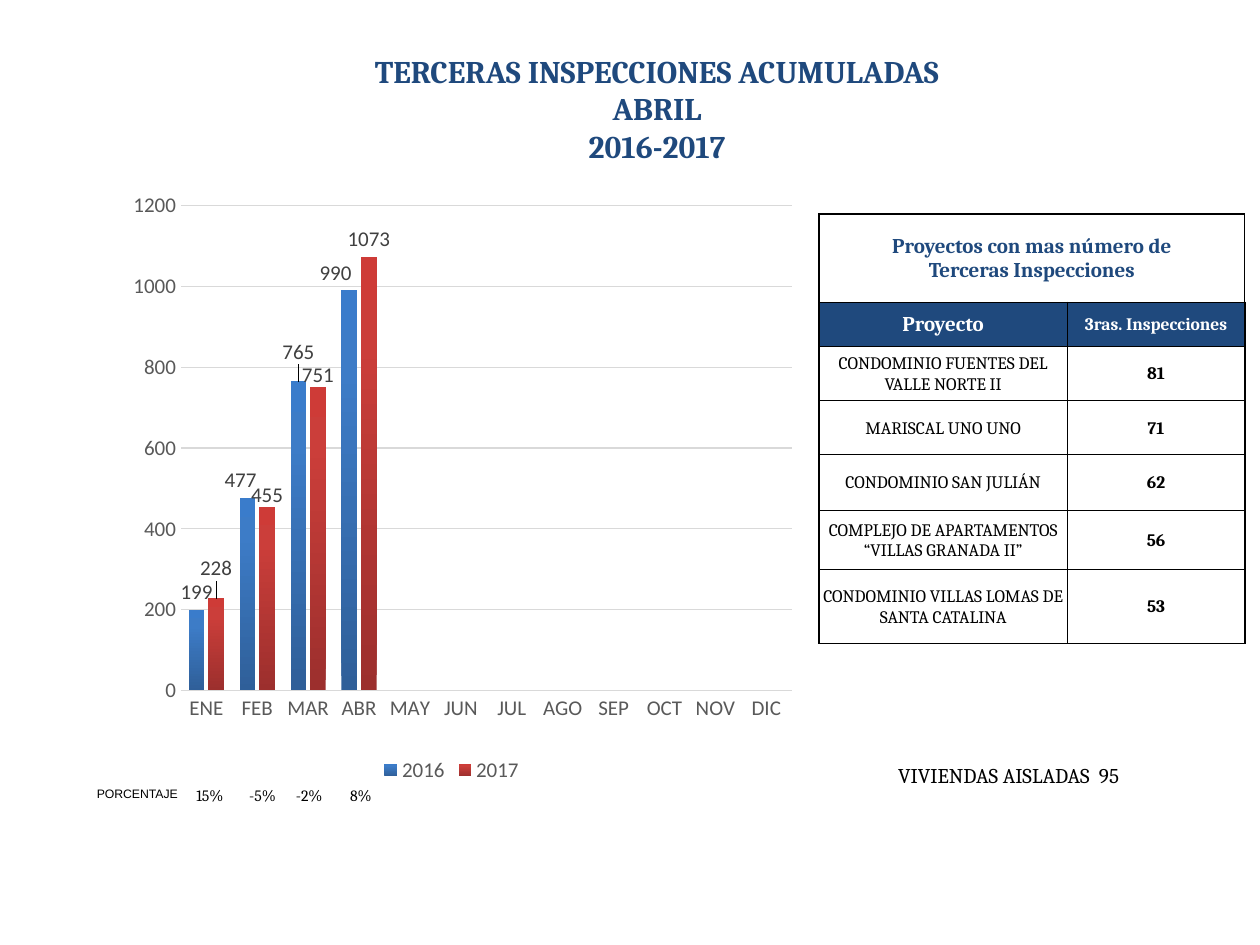
from lxml import etree
from pptx import Presentation
from pptx.chart.data import CategoryChartData
from pptx.dml.color import RGBColor
from pptx.enum.chart import XL_CHART_TYPE, XL_LABEL_POSITION, XL_LEGEND_POSITION, XL_TICK_MARK
from pptx.enum.text import MSO_ANCHOR, MSO_AUTO_SIZE, PP_ALIGN
from pptx.oxml import parse_xml
from pptx.oxml.ns import nsdecls, qn
from pptx.util import Inches, Pt

CENTER, LEFT = PP_ALIGN.CENTER, PP_ALIGN.LEFT
TOP, MIDDLE = MSO_ANCHOR.TOP, MSO_ANCHOR.MIDDLE
OUTSIDE_END = XL_LABEL_POSITION.OUTSIDE_END
NO_TICK = XL_TICK_MARK.NONE

COLORS = {"navy": "1F497D", "black": "000000", "white": "FFFFFF",
          "axis": "595959", "label": "404040", "grid": "D9D9D9"}

TITLE = ["TERCERAS INSPECCIONES ACUMULADAS", "ABRIL", "2016-2017"]
MONTHS = ["ENE", "FEB", "MAR", "ABR", "MAY", "JUN",
          "JUL", "AGO", "SEP", "OCT", "NOV", "DIC"]
# Gradient: (position in percent, colour); label shifts: fractions of the chart size
YEARS = [
    {"name": "2016", "values": [199, 477, 765, 990],
     "gradient": [(0, "2F5F99"), (80, "3D7CC7"), (100, "3A7CCB")],
     "label_shifts": {1: (-0.01, 0), 2: (0, -0.02), 3: (-0.02, 0)}},
    {"name": "2017", "values": [228, 455, 751, 1073],
     "gradient": [(0, "9C2F2D"), (80, "CB3E3A"), (100, "CE3B37")],
     "label_shifts": {0: (0, -0.02), 1: (0, 0.01), 2: (0, 0.01)}},
]
PERCENT_CAPTION = "PORCENTAJE"
PERCENTAGES = ["15%", "-5%", "-2%", "8%"]
PERCENT_TABS = [0.42, 0.79, 1.22]

PROJECTS_HEADING = ["Proyectos con mas número de", "Terceras Inspecciones"]
PROJECT_COLUMNS = ["Proyecto", "3ras. Inspecciones"]
PROJECTS = [
    ("CONDOMINIO FUENTES DEL VALLE NORTE II", "81"),
    ("MARISCAL UNO UNO", "71"),
    ("CONDOMINIO SAN JULIÁN", "62"),
    ("COMPLEJO DE APARTAMENTOS “VILLAS GRANADA II”", "56"),
    ("CONDOMINIO VILLAS LOMAS DE SANTA CATALINA", "53"),
]
PROJECT_WIDTHS = [1.97, 1.41]
PROJECT_HEIGHTS = [0.7, 0.35, 0.43, 0.43, 0.44, 0.47, 0.59]
ISOLATED_HOMES = "VIVIENDAS AISLADAS  95"


def rgb(name):
    return RGBColor.from_string(COLORS[name])


def set_font(font, size, color, name="Cambria", bold=False):
    font.size, font.name, font.bold = Pt(size), name, bold
    font.color.rgb = rgb(color)


def write(frame, lines, size, color="black", name="Cambria", bold=False,
          align=CENTER, tabs=()):
    """Fill a text frame with one paragraph per line, with optional tab stops."""
    for index, line in enumerate(lines):
        paragraph = frame.paragraphs[0] if index == 0 else frame.add_paragraph()
        paragraph.text = line
        paragraph.alignment = align
        if tabs:
            tab_list = etree.SubElement(paragraph._p.get_or_add_pPr(), qn("a:tabLst"))
            for stop in tabs:
                etree.SubElement(tab_list, qn("a:tab"), pos=str(Inches(stop)), algn="l")
        set_font(paragraph.font, size, color, name, bold)
        for run in paragraph.runs:
            set_font(run.font, size, color, name, bold)


def add_label(slide, box, text, **style):
    frame = slide.shapes.add_textbox(*map(Inches, box)).text_frame
    frame.word_wrap = True
    write(frame, [text], align=LEFT, **style)


def add_plain_table(slide, left, top, widths, heights):
    """Add a table without banding or fills."""
    table = slide.shapes.add_table(
        len(heights), len(widths), Inches(left), Inches(top),
        Inches(sum(widths)), Inches(sum(heights))).table
    table.first_row = table.horz_banding = False
    for column, width in zip(table.columns, widths):
        column.width = Inches(width)
    for row, height in zip(table.rows, heights):
        row.height = Inches(height)
    for cell in table.iter_cells():
        cell.fill.background()
        cell.vertical_anchor = MIDDLE
    return table


def set_borders(cell, widths):
    """Draw black borders; widths are points for left, right, top, bottom."""
    properties = cell._tc.get_or_add_tcPr()
    for index, (side, width) in enumerate(zip("LRTB", widths)):
        properties.insert(index, parse_xml(
            f'<a:ln{side} {nsdecls("a")} w="{Pt(width)}"><a:solidFill>'
            f'<a:srgbClr val="{COLORS["black"]}"/></a:solidFill></a:ln{side}>'))


def add_projects(slide):
    table = add_plain_table(slide, 6.5, 1.7, PROJECT_WIDTHS, PROJECT_HEIGHTS)
    for r in range(len(PROJECT_HEIGHTS)):
        for c in range(len(PROJECT_WIDTHS)):
            cell = table.cell(r, c)
            cell.margin_left = cell.margin_right = cell.margin_top = Inches(0.01)
            cell.margin_bottom = 0
            set_borders(cell, (1 if c == 0 else 0.5, 1 if c == 1 else 0.5,
                               1 if r < 2 else 0.5, 1 if r == 0 else 0.5))
    heading = table.cell(0, 0)
    heading.merge(table.cell(0, 1))
    write(heading.text_frame, PROJECTS_HEADING, 12, "navy", bold=True)
    for c, (text, size) in enumerate(zip(PROJECT_COLUMNS, (12, 10))):
        cell = table.cell(1, c)
        cell.fill.solid()
        cell.fill.fore_color.rgb = rgb("navy")
        write(cell.text_frame, [text], size, "white", bold=True)
    for r, project in enumerate(PROJECTS, start=2):
        for c, text in enumerate(project):
            write(table.cell(r, c).text_frame, [text], 10, bold=c == 1)


def manual_layout(x, y, extra=""):
    return parse_xml(f'<c:layout {nsdecls("c")}><c:manualLayout>{extra}'
                     f'<c:x val="{x}"/><c:y val="{y}"/></c:manualLayout></c:layout>')


def format_series(series, year):
    stops = "".join(f'<a:gs pos="{position * 1000}"><a:srgbClr val="{color}"/></a:gs>'
                    for position, color in year["gradient"])
    series.format.fill.background()
    properties = series._element.spPr
    properties.replace(properties.find(qn("a:noFill")), parse_xml(
        f'<a:gradFill {nsdecls("a")}><a:gsLst>{stops}</a:gsLst>'
        '<a:lin ang="16200000" scaled="0"/></a:gradFill>'))
    labels = series.data_labels
    labels.show_value = True
    labels.position = OUTSIDE_END
    set_font(labels.font, 12, "label", "Calibri")
    for index, shift in year["label_shifts"].items():
        label = series.points[index].data_label
        set_font(label.font, 12, "label", "Calibri")
        label.position = OUTSIDE_END
        element = labels._element.find(f'{qn("c:dLbl")}[{qn("c:idx")}][@val]')
        for element in labels._element.findall(qn("c:dLbl")):
            if element.find(qn("c:idx")).get("val") == str(index):
                element.insert(1, manual_layout(*shift))


def add_inspections_chart(slide):
    data = CategoryChartData()
    data.categories = MONTHS
    for year in YEARS:
        blanks = [None] * (len(MONTHS) - len(year["values"]))
        data.add_series(year["name"], year["values"] + blanks)
    chart = slide.shapes.add_chart(
        XL_CHART_TYPE.COLUMN_CLUSTERED, *map(Inches, (0.83, 1.44, 5.51, 4.81)), data).chart
    set_font(chart.font, 10, "black", "Calibri")
    chart.has_title = False
    chart.has_legend = True
    chart.legend.position = XL_LEGEND_POSITION.BOTTOM
    chart.legend.include_in_layout = False
    set_font(chart.legend.font, 12, "axis", "Calibri")

    months, counts = chart.category_axis, chart.value_axis
    for axis in (months, counts):
        axis.major_tick_mark = axis.minor_tick_mark = NO_TICK
        set_font(axis.tick_labels.font, 12, "axis", "Calibri")
    months.format.line.color.rgb = rgb("grid")
    months.format.line.width = Pt(1)
    counts.minimum_scale, counts.maximum_scale, counts.major_unit = 0, 1200, 200
    counts.format.line.fill.background()
    counts.major_gridlines.format.line.color.rgb = rgb("grid")
    counts.major_gridlines.format.line.width = Pt(0.75)

    plot = chart.plots[0]
    plot.gap_width, plot.overlap, plot.vary_by_categories = 100, -24, False
    for series, year in zip(plot.series, YEARS):
        format_series(series, year)

    area = chart._chartSpace.chart.plotArea
    for old in area.findall(qn("c:layout")):
        area.remove(old)
    layout = manual_layout(0.11, 0.04, '<c:layoutTarget val="inner"/>'
                           '<c:xMode val="edge"/><c:yMode val="edge"/>')
    for tag, size in (("c:w", 0.88), ("c:h", 0.8)):
        etree.SubElement(layout[0], qn(tag), val=str(size))
    area.insert(0, layout)


def main():
    deck = Presentation()
    deck.slide_width, deck.slide_height = Inches(10), Inches(7.5)
    slide = deck.slides.add_slide(deck.slide_layouts[5])
    title = slide.shapes.title
    title.left, title.top, title.width, title.height = map(Inches, (2.01, 0.36, 6.41, 1.04))
    title.text_frame.auto_size = MSO_AUTO_SIZE.NONE
    title.text_frame.vertical_anchor = TOP
    write(title.text_frame, TITLE, 18, "navy", bold=True)

    homes = add_plain_table(slide, 6.97, 5.93, [2.07], [0.47])
    write(homes.cell(0, 0).text_frame, [ISOLATED_HOMES], 12)
    add_label(slide, (0.67, 6.19, 0.87, 0.52), PERCENT_CAPTION, size=7, name="Arial")
    add_label(slide, (1.46, 6.19, 1.73, 0.25), "\t".join(PERCENTAGES),
              size=9, tabs=PERCENT_TABS)
    add_projects(slide)
    add_inspections_chart(slide)
    deck.save("out.pptx")


if __name__ == "__main__":
    main()
